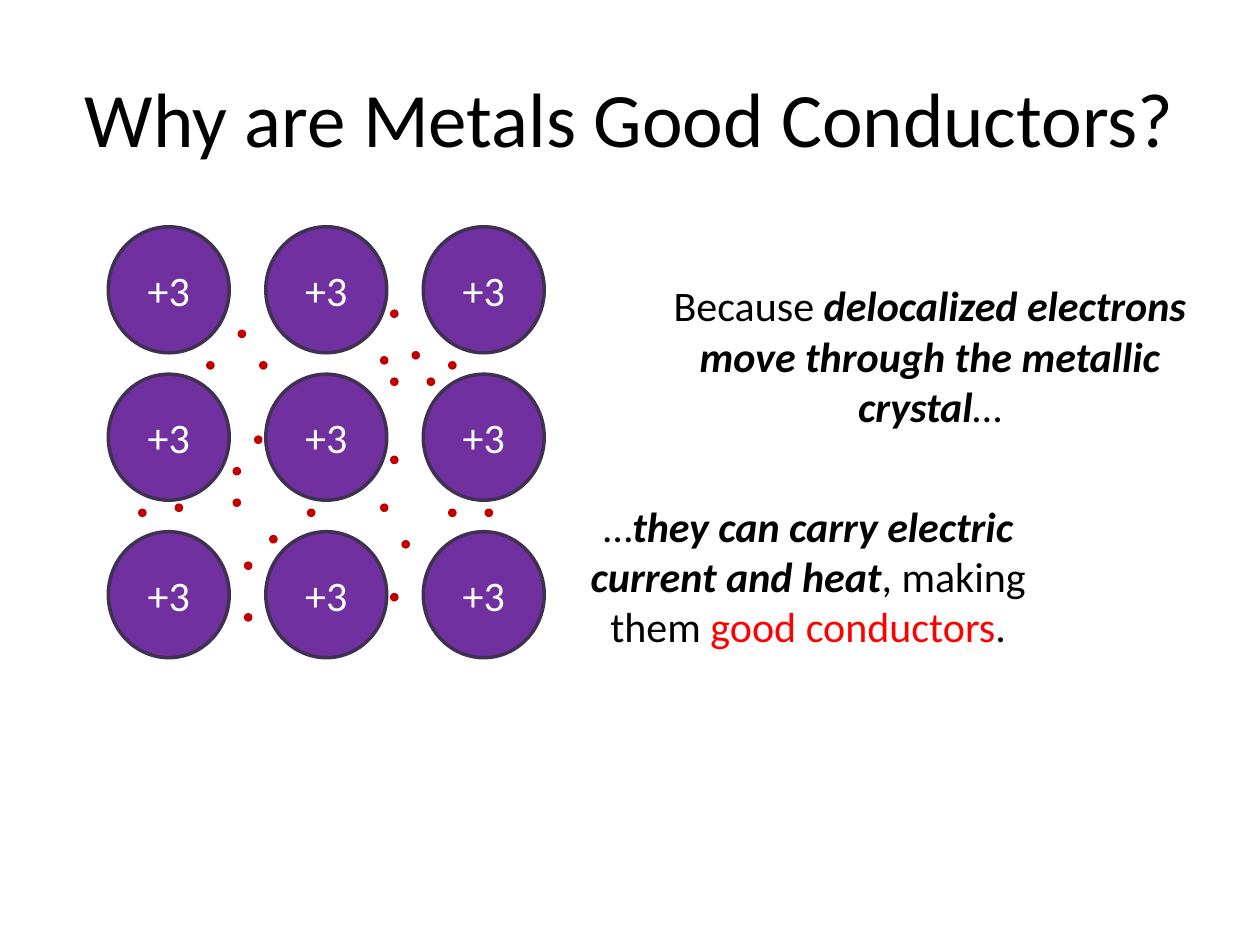
import pptx
import pptx.util
import pptx.dml.color
import pptx.enum.shapes
import pptx.enum.text

presentation = pptx.Presentation()
presentation.slide_width = pptx.util.Inches(10)
presentation.slide_height = pptx.util.Inches(7.5)
slide = presentation.slides.add_slide(presentation.slide_layouts[5])


def color(hex_value):
    return pptx.dml.color.RGBColor.from_string(hex_value)


def write(shape, *pieces, size=24, fill="000000", anchor="MIDDLE"):
    frame = shape.text_frame
    frame.word_wrap = True
    frame.vertical_anchor = pptx.enum.text.MSO_ANCHOR[anchor]
    paragraph = frame.paragraphs[0]
    paragraph.alignment = pptx.enum.text.PP_ALIGN.CENTER
    for text, emphasis, accent in pieces:
        run = paragraph.add_run()
        run.text = text
        run.font.name = "Calibri"
        run.font.size = pptx.util.Pt(size)
        run.font.bold = run.font.italic = emphasis
        run.font.color.rgb = color(accent or fill)


title = slide.shapes.title
title.left, title.top, title.width, title.height = map(pptx.util.Inches, (0.5, 0.3, 9, 1.25))
write(title, ("Why are Metals Good Conductors?", False, None), size=44)

ion_left, ion_pitch, ion_width, ion_height = 0.86, 1.25, 0.96, 1
ion_rows = (1.8, 2.97, 4.22)
ions = [(ion_left + column * ion_pitch, top, ion_width, ion_height, "7030A0", "403152", "+3")
        for top in ion_rows for column in range(3)]

electron_size = 0.04
electron_rows = {
    2.47: (3.11,),
    2.63: (1.9,),
    2.8: (3.28,),
    2.84: (3.03,),
    2.88: (1.65, 2.07, 3.57),
    3.01: (3.11, 3.4),
    3.47: (2.03,),
    3.63: (3.11,),
    3.72: (1.86,),
    3.97: (1.86,),
    4.01: (1.4, 3.03),
    4.05: (1.11, 2.45, 3.57, 3.86),
    4.26: (2.15,),
    4.3: (3.2,),
    4.47: (1.95,),
    4.72: (3.11,),
    4.88: (1.95,),
}
electrons = [(left, top, electron_size, electron_size, "FF0000", "C00000", "")
             for top, lefts in electron_rows.items() for left in lefts]

for left, top, width, height, fill, outline, label in ions + electrons:
    circle = slide.shapes.add_shape(
        pptx.enum.shapes.MSO_SHAPE.OVAL, *map(pptx.util.Inches, (left, top, width, height)))
    circle.shadow.inherit = False
    circle.fill.solid()
    circle.fill.fore_color.rgb = color(fill)
    circle.line.color.rgb = color(outline)
    circle.line.width = pptx.util.Pt(2)
    if label:
        write(circle, (label, False, None), fill="FFFFFF")

cause = slide.shapes.add_textbox(*map(pptx.util.Inches, (5.17, 2.17, 4.42, 1.31)))
write(cause,
      ("Because ", False, None),
      ("delocalized electrons move through the metallic crystal", True, None),
      ("…", False, None), anchor="TOP")

effect = slide.shapes.add_textbox(*map(pptx.util.Inches, (4.5, 3.92, 3.83, 1.31)))
write(effect,
      ("…", False, None),
      ("they can carry electric current and heat", True, None),
      (", making them ", False, None),
      ("good conductors", False, "FF0000"),
      (".", False, None), anchor="TOP")

presentation.save("out.pptx")
